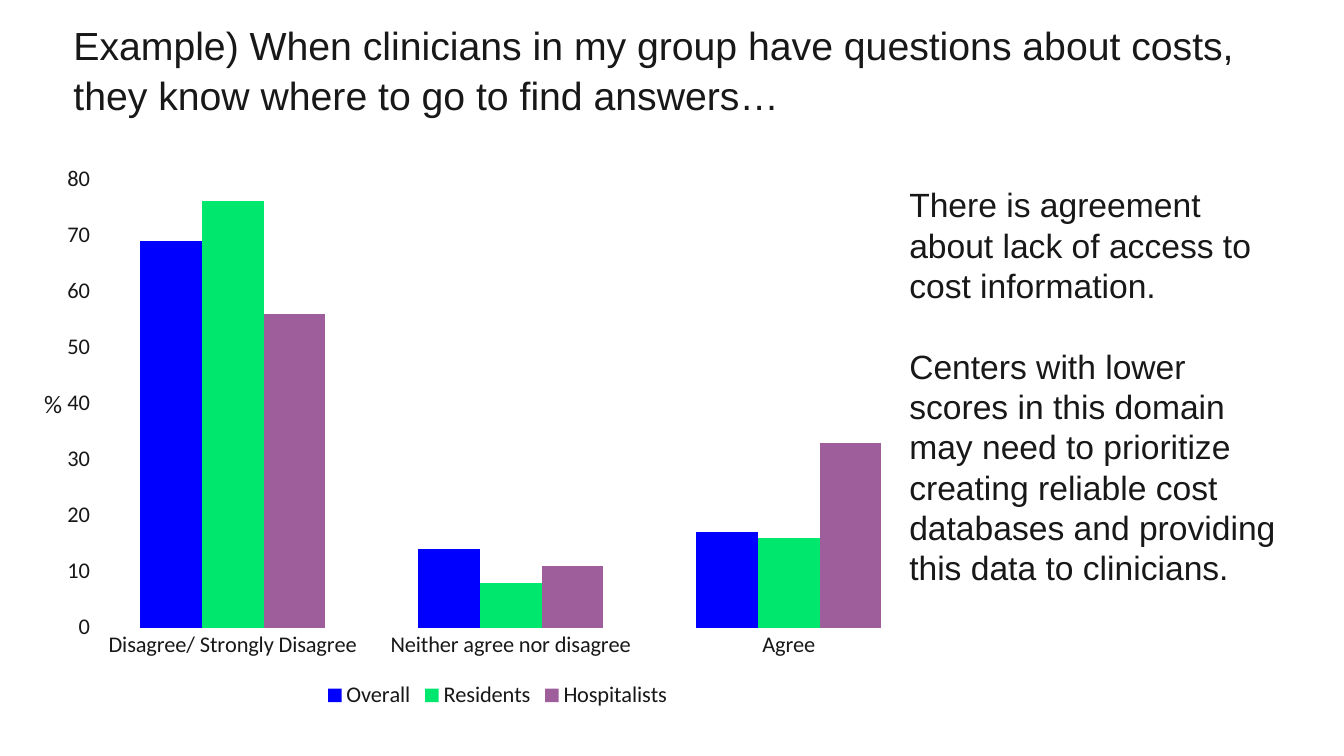
from pptx import Presentation
from pptx.chart.data import CategoryChartData
from pptx.dml.color import RGBColor
from pptx.enum.chart import XL_CHART_TYPE, XL_LEGEND_POSITION, XL_TICK_MARK
from pptx.enum.text import MSO_AUTO_SIZE
from pptx.util import Inches, Pt

CLUSTERED = XL_CHART_TYPE.COLUMN_CLUSTERED
LEGEND_BOTTOM = XL_LEGEND_POSITION.BOTTOM
NO_TICK = XL_TICK_MARK.NONE
FIT_SHAPE = MSO_AUTO_SIZE.SHAPE_TO_FIT_TEXT

COLORS = {
    "text": "181818",
    "Overall": "0000FF",
    "Residents": "00E76D",
    "Hospitalists": "9E5E9B",
}
CATEGORIES = ["Disagree/ Strongly Disagree", "Neither agree nor disagree", "Agree"]
SCORES = {
    "Overall": (69, 14, 17),
    "Residents": (76, 8, 16),
    "Hospitalists": (56, 11, 33),
}
TITLE = ("Example) When clinicians in my group have questions about costs, "
         "they know where to go to find answers…")
FINDINGS = [
    "There is agreement about lack of access to cost information.",
    "Centers with lower scores in this domain may need to prioritize creating "
    "reliable cost databases and providing this data to clinicians.",
]


def color(name):
    return RGBColor.from_string(COLORS[name])


def style_font(font, name, size):
    font.name = name
    font.size = Pt(size)
    font.color.rgb = color("text")


def add_text(slide, box, texts, font_name, size, wrap=True, gap=0):
    """Add a text box with one paragraph per text, gap points apart."""
    shape = slide.shapes.add_textbox(*map(Inches, box))
    frame = shape.text_frame
    frame.word_wrap = wrap
    frame.auto_size = FIT_SHAPE
    for index, text in enumerate(texts):
        paragraph = frame.add_paragraph() if index else frame.paragraphs[0]
        if index:
            paragraph.space_before = Pt(gap)
        run = paragraph.add_run()
        run.text = text
        style_font(run.font, font_name, size)
    return shape


def style_axis(axis):
    axis.has_major_gridlines = False
    axis.major_tick_mark = NO_TICK
    axis.minor_tick_mark = NO_TICK
    axis.format.line.fill.background()
    style_font(axis.tick_labels.font, "Calibri", 16)


def add_score_chart(slide, box):
    data = CategoryChartData(number_format="0")
    data.categories = CATEGORIES
    for name, values in SCORES.items():
        data.add_series(name, values)
    chart = slide.shapes.add_chart(CLUSTERED, *map(Inches, box), data).chart
    chart.has_title = False
    style_font(chart.font, "Calibri", 16)

    style_axis(chart.category_axis)
    style_axis(chart.value_axis)
    chart.value_axis.minimum_scale = 0
    chart.value_axis.maximum_scale = 80
    chart.value_axis.major_unit = 10

    chart.has_legend = True
    chart.legend.position = LEGEND_BOTTOM
    chart.legend.include_in_layout = False
    style_font(chart.legend.font, "Calibri", 16)

    plot = chart.plots[0]
    plot.gap_width = 150
    plot.overlap = 0
    plot.vary_by_categories = False
    for series in plot.series:
        series.format.fill.solid()
        series.format.fill.fore_color.rgb = color(series.name)


def main():
    presentation = Presentation()
    presentation.slide_width = Inches(13.33)
    presentation.slide_height = Inches(7.5)
    slide = presentation.slides.add_slide(presentation.slide_layouts[6])

    title = add_text(slide, (0.63, 0.13, 12.18, 1.11), [TITLE], "Arial", 28)
    title_paragraph = title.text_frame.paragraphs[0]
    title_paragraph.line_spacing = 1.07
    title_paragraph.space_after = Pt(8)

    add_score_chart(slide, (0.49, 1.53, 8.89, 5.55))
    add_text(slide, (8.92, 1.78, 3.9, 4.14), FINDINGS, "Arial", 24, gap=28.8)
    add_text(slide, (0.34, 3.8, 0.38, 0.4), ["%"], "Calibri", 18, wrap=False)

    presentation.save("out.pptx")


if __name__ == "__main__":
    main()
